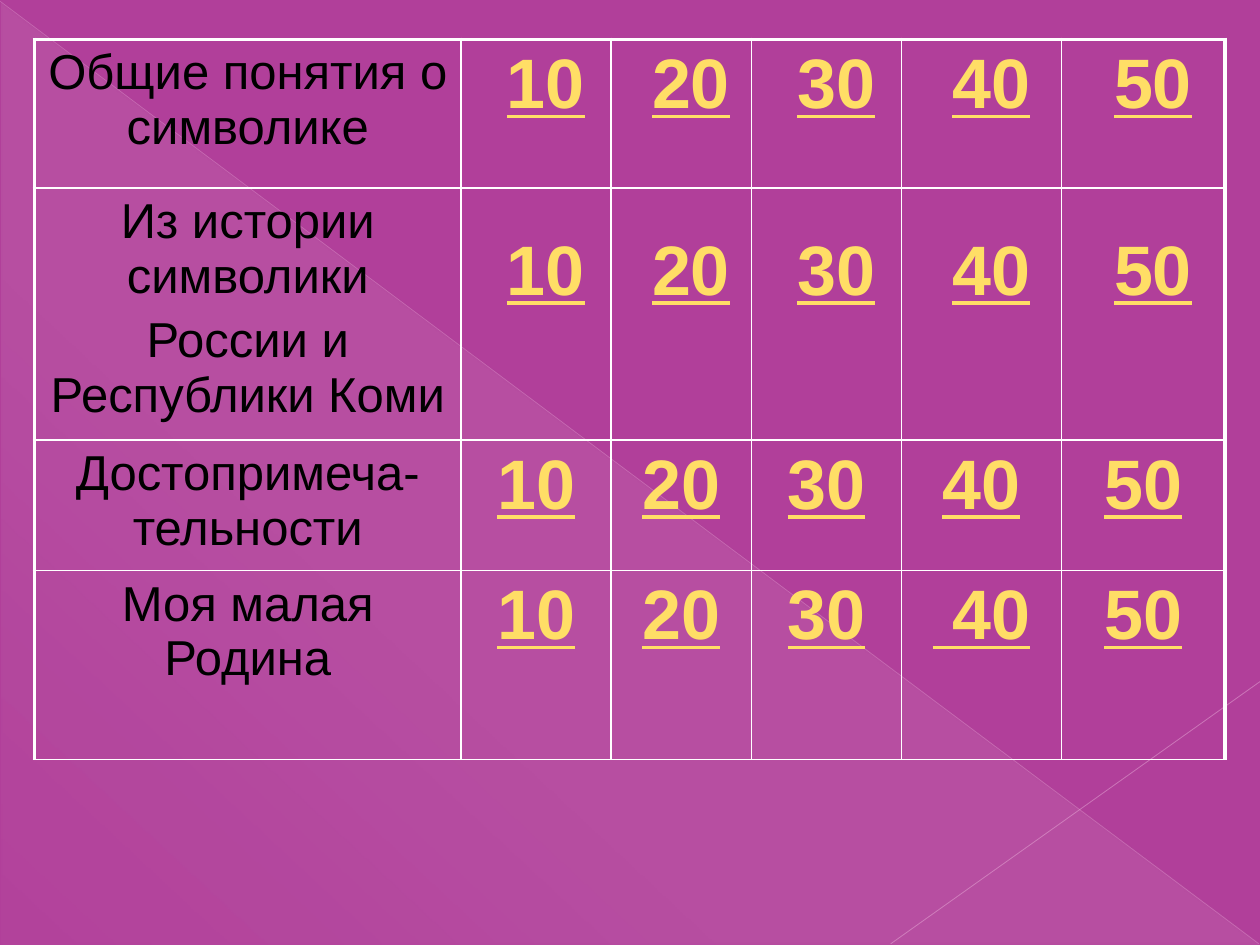
import dataclasses

import lxml.etree
import pptx
import pptx.dml.color
import pptx.enum.shapes
import pptx.enum.text
import pptx.oxml.ns
import pptx.oxml.xmlchemy
import pptx.util

Pt = pptx.util.Pt
qn = pptx.oxml.ns.qn


@dataclasses.dataclass(frozen=True)
class Theme:
    background: str = "B13F9A"
    sheen: str = "F4E7ED"
    border: str = "FFFFFF"
    topic: str = "000000"
    score: str = "FFDE66"
    font: str = "Arial"
    topic_size: float = 28
    score_size: float = 40
    thin: float = 1
    thick: float = 2.25


@dataclasses.dataclass(frozen=True)
class Category:
    topic: tuple[str, ...]
    scores: tuple[str, ...]
    height: float
    score_left: float = 7.2
    score_top: float = 3.6


@dataclasses.dataclass(frozen=True)
class Ray:
    start: tuple[float, float]
    end: tuple[float, float]
    color: str
    width: float
    opacity: int


THEME = Theme()
SLIDE_SIZE = (720, 540)
TABLE_LEFT, TABLE_TOP = 19.6, 22.5
COLUMN_WIDTHS = (244, 85.5, 80.5, 85.5, 91.5, 93.5)
SCORES = ("10", "20", "30", "40", "50")
CATEGORIES = (
    Category(("Общие понятия о символике",), SCORES, 85, score_left=18.3),
    Category(("Из истории символики", "России и Республики Коми"), SCORES, 144,
             score_left=18.3, score_top=25.4),
    Category(("Достопримеча-тельности",), SCORES, 74.5),
    Category(("Моя малая Родина",), ("10", "20", "30", " 40", "50"), 108),
)
RAYS = (
    Ray((0, 0.7), (719.3, 539.3), "E9A8D7", 0.39, 35),
    Ray((720, 389.5), (509, 539.3), "EBB2DB", 0.47, 45),
)
SHEEN_STOPS = ((0, 10), (70, 8), (100, 1))
SHEEN_ANGLE = 133


def rgb(color: str) -> pptx.dml.color.RGBColor:
    return pptx.dml.color.RGBColor.from_string(color)


def add_color(parent, color: str, opacity: int) -> None:
    node = lxml.etree.SubElement(parent, qn("a:srgbClr"), val=color)
    lxml.etree.SubElement(node, qn("a:alpha"), val=str(opacity * 1000))


def draw_sheen(slide) -> None:
    triangle = slide.shapes.add_shape(
        pptx.enum.shapes.MSO_SHAPE.RIGHT_TRIANGLE, Pt(0.7), Pt(1.4), Pt(719.3), Pt(538.6))
    triangle.shadow.inherit = False
    triangle.line.fill.background()
    gradient = pptx.oxml.xmlchemy.OxmlElement("a:gradFill")
    stops = lxml.etree.SubElement(gradient, qn("a:gsLst"))
    for position, opacity in SHEEN_STOPS:
        stop = lxml.etree.SubElement(stops, qn("a:gs"), pos=str(position * 1000))
        add_color(stop, THEME.sheen, opacity)
    lxml.etree.SubElement(gradient, qn("a:lin"), ang=str(SHEEN_ANGLE * 60000), scaled="0")
    triangle.element.spPr.find(qn("a:prstGeom")).addnext(gradient)


def draw_ray(slide, ray: Ray) -> None:
    line = slide.shapes.add_connector(
        pptx.enum.shapes.MSO_CONNECTOR.STRAIGHT, *map(Pt, ray.start + ray.end))
    line.line.width = Pt(ray.width)
    line.line.color.rgb = rgb(ray.color)
    properties = line.element.spPr
    fill = properties.find(qn("a:ln")).find(qn("a:solidFill"))
    fill.clear()
    add_color(fill, ray.color, ray.opacity)
    lxml.etree.SubElement(properties, qn("a:effectLst"))


def set_borders(cell, widths: dict[str, float]) -> None:
    properties = cell._tc.get_or_add_tcPr()
    for index, (side, width) in enumerate(widths.items()):
        border = pptx.oxml.xmlchemy.OxmlElement(f"a:ln{side}")
        border.set("w", str(int(Pt(width))))
        fill = lxml.etree.SubElement(border, qn("a:solidFill"))
        add_color(fill, THEME.border, 100)
        properties.insert(index, border)


def write_cell(cell, lines: tuple[str, ...], size: float, color: str, is_score: bool) -> None:
    cell.text = "\n".join(lines)
    for index, para in enumerate(cell.text_frame.paragraphs):
        para.alignment = pptx.enum.text.PP_ALIGN.CENTER
        if index:
            para.space_before = Pt(size * 0.2)
        for span in (para, *para.runs):
            span.font.name = THEME.font
            span.font.size = Pt(size)
            span.font.bold = is_score
            span.font.underline = is_score
            span.font.color.rgb = rgb(color)


def draw_table(slide) -> None:
    frame = slide.shapes.add_table(
        len(CATEGORIES), len(COLUMN_WIDTHS), Pt(TABLE_LEFT), Pt(TABLE_TOP),
        Pt(sum(COLUMN_WIDTHS)), Pt(sum(category.height for category in CATEGORIES)))
    table = frame.table
    table.first_row = table.horz_banding = False
    for column, width in zip(table.columns, COLUMN_WIDTHS):
        column.width = Pt(width)
    last_column = len(COLUMN_WIDTHS) - 1
    for row, category in enumerate(CATEGORIES):
        table.rows[row].height = Pt(category.height)
        for column in range(len(COLUMN_WIDTHS)):
            cell = table.cell(row, column)
            cell.fill.background()
            # Heavier outline on the left, right and top of the table
            set_borders(cell, {
                "L": THEME.thick if column == 0 else THEME.thin,
                "R": THEME.thick if column == last_column else THEME.thin,
                "T": THEME.thick if row == 0 else THEME.thin,
                "B": THEME.thin,
            })
            if column == 0:
                write_cell(cell, category.topic, THEME.topic_size, THEME.topic, False)
            else:
                cell.margin_left = Pt(category.score_left)
                cell.margin_top = Pt(category.score_top)
                score = category.scores[column - 1]
                write_cell(cell, (score,), THEME.score_size, THEME.score, True)


def main() -> None:
    deck = pptx.Presentation()
    deck.slide_width, deck.slide_height = map(Pt, SLIDE_SIZE)
    slide = deck.slides.add_slide(deck.slide_layouts[6])

    # Background
    slide.background.fill.solid()
    slide.background.fill.fore_color.rgb = rgb(THEME.background)
    draw_sheen(slide)
    for ray in RAYS:
        draw_ray(slide, ray)

    # Quiz board
    draw_table(slide)
    deck.save("out.pptx")


if __name__ == "__main__":
    main()
